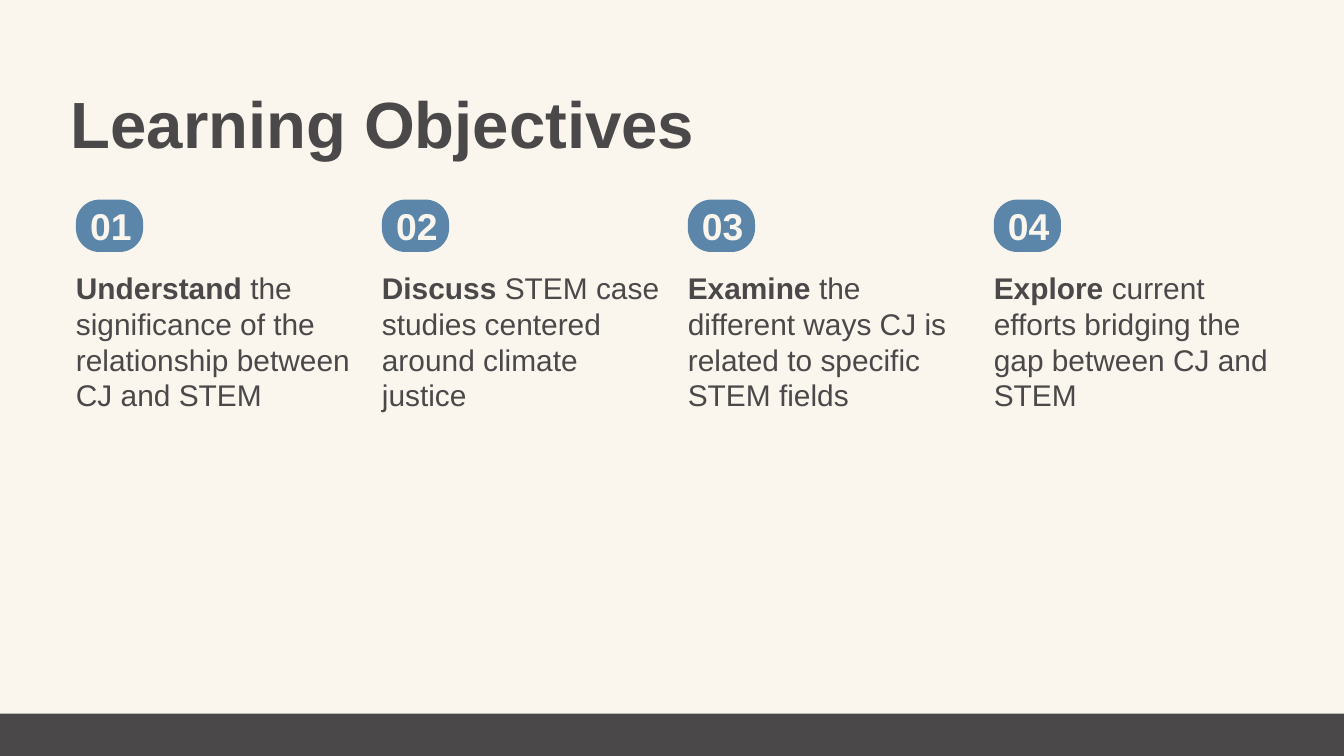
from pptx import Presentation, util as u
from pptx.dml.color import RGBColor
from pptx.enum import shapes, text

CREAM, CHARCOAL, BLUE = "FAF6EE", "4A4849", "5B85A9"
LEFT, COLUMN = 1.13, 4.553
BADGE_ROW, GOAL_ROW, FOOTER_ROW = 2.97, 4.01, 10.62


def color(hex_code):
    return RGBColor.from_string(hex_code)


def add_text(runs, box, size, ink=CHARCOAL):
    """Write one paragraph of (wording, bold) runs in a box given in inches."""
    frame = slide.shapes.add_textbox(*map(u.Inches, box)).text_frame
    frame.word_wrap = True
    frame.auto_size = text.MSO_AUTO_SIZE.NONE
    frame.margin_left = frame.margin_right = 0
    frame.margin_top = frame.margin_bottom = 0
    paragraph = frame.paragraphs[0]
    paragraph.line_spacing = u.Pt(size * 1.2)
    for wording, bold in runs:
        run = paragraph.add_run()
        run.text = wording
        run.font.name = "Arial"
        run.font.size = u.Pt(size)
        run.font.bold = bold
        run.font.color.rgb = color(ink)


deck = Presentation()
deck.slide_width, deck.slide_height = u.Inches(20), u.Inches(11.25)
slide = deck.slides.add_slide(deck.slide_layouts[6])
slide.background.fill.solid()
slide.background.fill.fore_color.rgb = color(CREAM)

add_text([("Learning Objectives", True)], (1.05, 1.24, 17.82, 1.18), 70)

footer = slide.shapes.add_shape(
    shapes.MSO_SHAPE.RECTANGLE, 0, u.Inches(FOOTER_ROW),
    deck.slide_width, deck.slide_height - u.Inches(FOOTER_ROW))
footer.shadow.inherit = False
footer.fill.solid()
footer.fill.fore_color.rgb = color(CHARCOAL)
footer.line.fill.background()

objectives = [
    ("Understand", " the significance of the relationship between CJ and STEM"),
    ("Discuss", " STEM case studies centered around climate justice"),
    ("Examine", " the different ways CJ is related to specific STEM fields"),
    ("Explore", " current efforts bridging the gap between CJ and STEM"),
]
for index, (verb, goal) in enumerate(objectives):
    x = LEFT + index * COLUMN
    badge = slide.shapes.add_shape(
        shapes.MSO_SHAPE.ROUNDED_RECTANGLE,
        *map(u.Inches, (x, BADGE_ROW, 1, 0.78)))
    badge.adjustments[0] = 0.45
    badge.shadow.inherit = False
    badge.fill.solid()
    badge.fill.fore_color.rgb = color(BLUE)
    badge.line.fill.background()
    add_text([(f"{index + 1:02}", True)],
             (x + 0.21, BADGE_ROW + 0.05, 3.39, 0.67), 40, CREAM)
    add_text([(verb, True), (goal, False)], (x, GOAL_ROW, 4.13, 2.15), 32)

deck.save("out.pptx")
